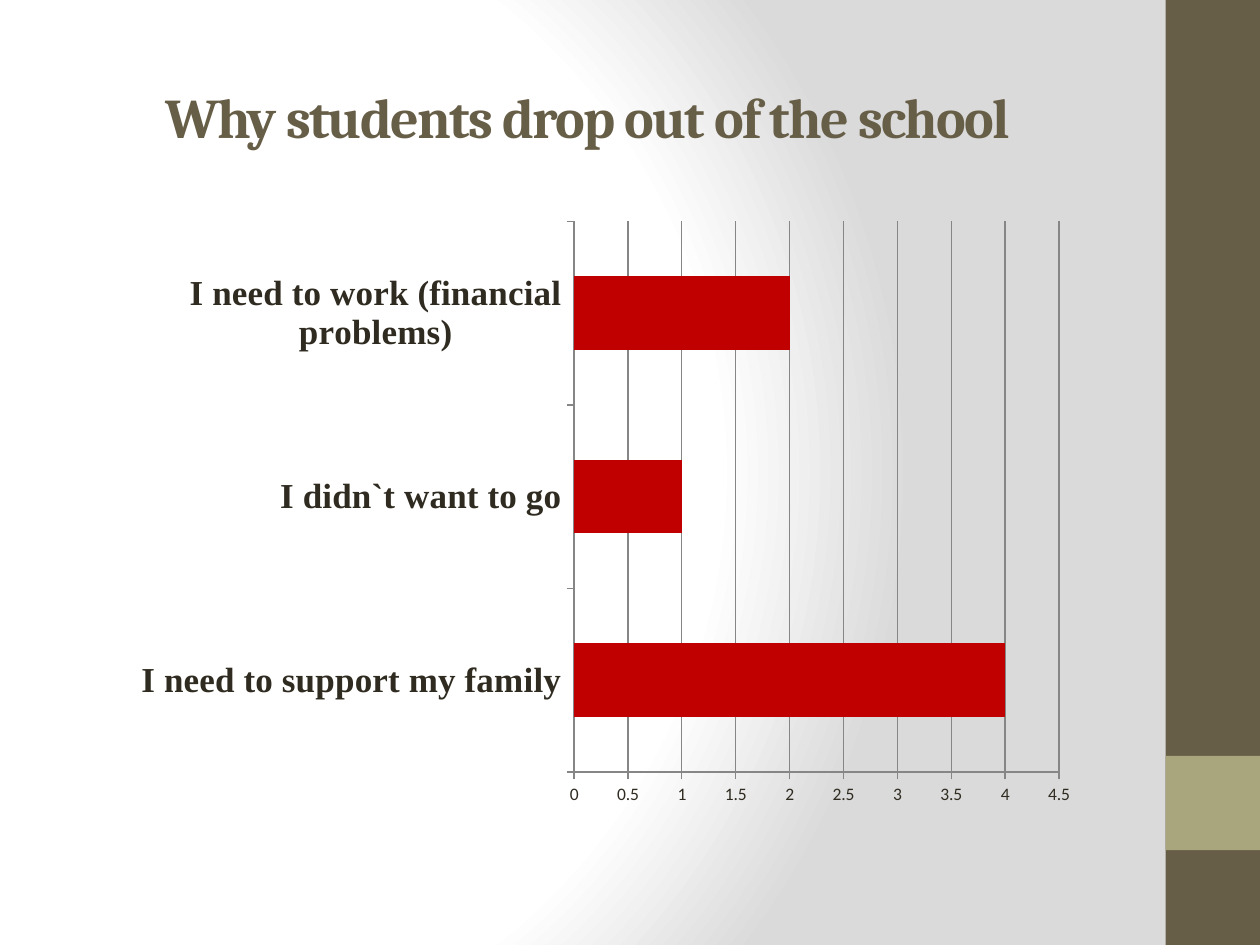
"""Build a slide with a bar chart of the reasons why students drop out of school."""
from pptx import Presentation
from pptx.chart.data import CategoryChartData
from pptx.dml.color import RGBColor
from pptx.enum.chart import XL_CHART_TYPE, XL_TICK_MARK
from pptx.enum.shapes import MSO_SHAPE
from pptx.enum.text import MSO_ANCHOR, PP_ALIGN
from pptx.oxml import parse_xml
from pptx.oxml.ns import nsdecls
from pptx.util import Cm, Pt

BAR_CLUSTERED = XL_CHART_TYPE.BAR_CLUSTERED
TICK_OUTSIDE = XL_TICK_MARK.OUTSIDE
RECTANGLE = MSO_SHAPE.RECTANGLE
MIDDLE = MSO_ANCHOR.MIDDLE
CENTER = PP_ALIGN.CENTER

BROWN, OLIVE, DARK, RED, GREY = "675E47", "A9A57C", "2F2B20", "C00000", "868686"
BACKGROUND_STOPS = [(0, "FFFFFF"), (75, "FFFFFF"), (100, "DADADA")]
PLOT_AREA = {"x": 0.487, "y": 0, "w": 0.462, "h": 0.833}


def color(value):
    return RGBColor.from_string(value)


presentation = Presentation()
presentation.slide_width, presentation.slide_height = Cm(25.4), Cm(19.05)
slide = presentation.slides.add_slide(presentation.slide_layouts[5])

slide.background.fill.solid()
background = slide.element.xpath("p:cSld/p:bg/p:bgPr")[0]
stops = "".join(
    f'<a:gs pos="{position * 1000}"><a:srgbClr val="{value}"/></a:gs>'
    for position, value in BACKGROUND_STOPS
)
background.replace(background[0], parse_xml(
    f'<a:gradFill {nsdecls("a")} rotWithShape="1"><a:gsLst>{stops}</a:gsLst>'
    '<a:path path="circle"><a:fillToRect l="20000" t="50000" r="100000" b="50000"/>'
    "</a:path></a:gradFill>"
))

for top, height, fill in [(0, 19.05, BROWN), (15.24, 1.9, OLIVE)]:
    band = slide.shapes.add_shape(RECTANGLE, Cm(23.5), Cm(top), Cm(1.9), Cm(height))
    band.shadow.inherit = False
    band.fill.solid()
    band.fill.fore_color.rgb = color(fill)
    band.line.fill.background()

title = slide.shapes.title
title.left, title.top, title.width, title.height = Cm(1.27), Cm(0.76), Cm(21.16), Cm(3.18)
title.text_frame.text = "Why students drop out of the school"
title.text_frame.vertical_anchor = MIDDLE
paragraph = title.text_frame.paragraphs[0]
paragraph.alignment = CENTER
paragraph.font.name = "Cambria"
paragraph.font.size = Pt(32)
paragraph.font.bold = True
paragraph.font.color.rgb = color(BROWN)
paragraph.runs[0].font._element.set("spc", "-100")

reasons = CategoryChartData()
reasons.categories = [
    "I need to support my family",
    "I didn`t want to go",
    "I need to work (financial problems)",
]
reasons.add_series("Series 1", [4, 1, 2])
chart = slide.shapes.add_chart(
    BAR_CLUSTERED, Cm(1.27), Cm(4.45), Cm(21.16), Cm(13.34), reasons
).chart
chart.has_legend = False
chart.has_title = False
chart.font.name = "Calibri"
chart.font.size = Pt(10)
chart.font.color.rgb = color(DARK)

plot = chart.plots[0]
plot.gap_width = 150
plot.vary_by_categories = False
bars = plot.series[0].format.fill
bars.solid()
bars.fore_color.rgb = color(RED)

category_axis, value_axis = chart.category_axis, chart.value_axis
value_axis.minimum_scale, value_axis.maximum_scale = 0, 4.5
value_axis.major_unit = 0.5
value_axis.has_major_gridlines = True
for axis in (category_axis, value_axis):
    axis.major_tick_mark = TICK_OUTSIDE
    axis.format.line.color.rgb = color(GREY)
value_axis.major_gridlines.format.line.color.rgb = color(GREY)
labels = category_axis.tick_labels.font
labels.name = "Times New Roman"
labels.size = Pt(20)
labels.bold = True
labels.color.rgb = color(DARK)

plot_area = chart.element.xpath("c:chart/c:plotArea")[0]
for layout in plot_area.xpath("c:layout"):
    plot_area.remove(layout)
sizes = "".join(f'<c:{key} val="{value}"/>' for key, value in PLOT_AREA.items())
plot_area.insert(0, parse_xml(
    f'<c:layout {nsdecls("c")}><c:manualLayout><c:layoutTarget val="inner"/>'
    f'<c:xMode val="edge"/><c:yMode val="edge"/>{sizes}</c:manualLayout></c:layout>'
))

presentation.save("out.pptx")
